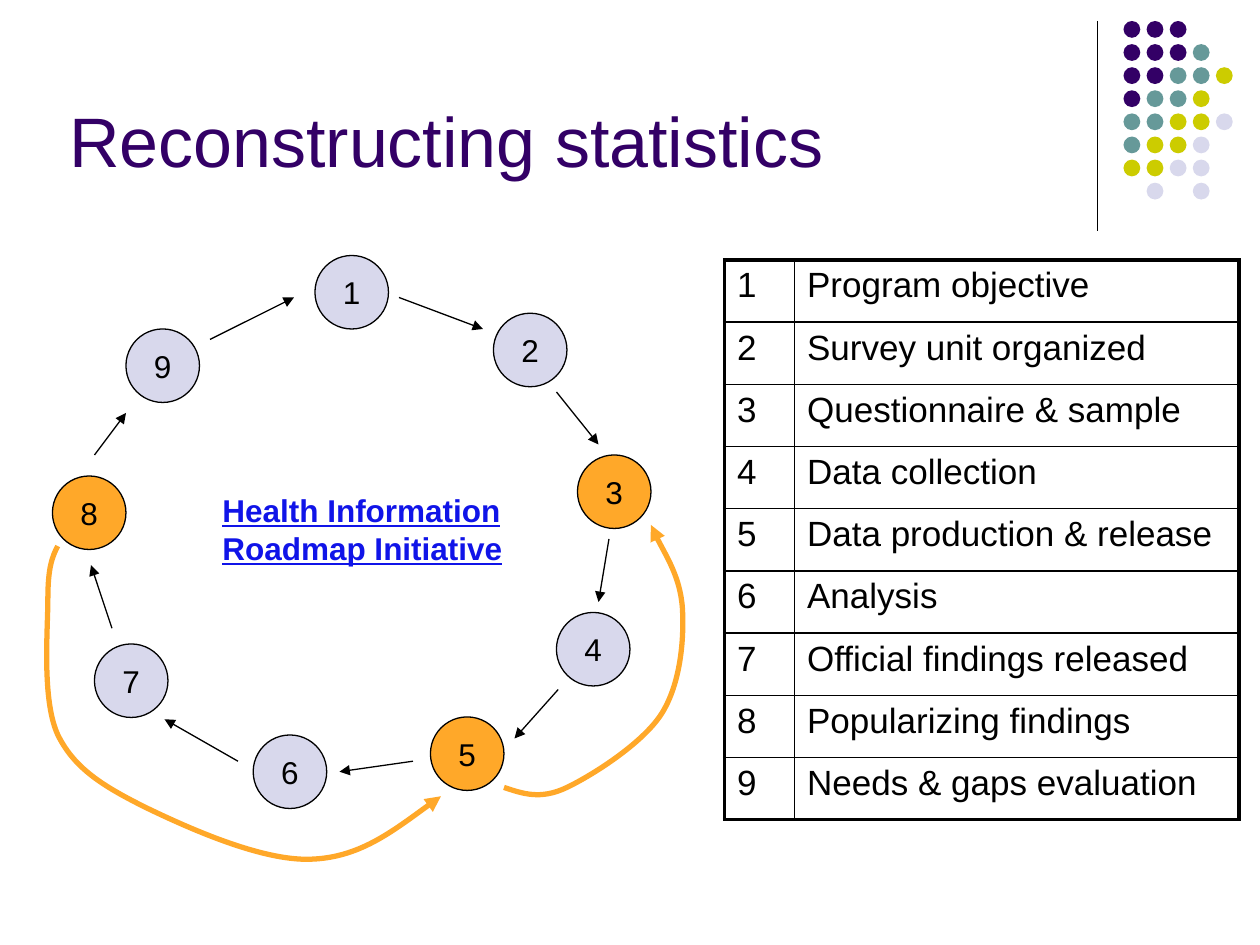
from pptx import Presentation
from pptx.dml.color import RGBColor
from pptx.enum.shapes import MSO_CONNECTOR as CONNECTOR, MSO_SHAPE as SHAPE
from pptx.enum.text import MSO_ANCHOR as ANCHOR, MSO_AUTO_SIZE as AUTO, PP_ALIGN as ALIGN
from pptx.oxml.ns import qn
from pptx.oxml.xmlchemy import OxmlElement as Element
from pptx.util import Pt

PURPLE, TEAL, LIME, LAVENDER = "330066", "669999", "CCCC00", "D8D8EC"
ORANGE, BLACK, LINK_BLUE = "FFA829", "000000", "1014E8"


def rgb(color):
    return RGBColor.from_string(color)


def draw_line(item, color, width, arrow=False):
    item.line.color.rgb = rgb(color)
    item.line.width = Pt(width)
    if arrow:
        head = Element("a:tailEnd")
        head.set("type", "triangle")
        item.line._get_or_add_ln().append(head)
    properties = item._element.spPr
    if properties.find(qn("a:effectLst")) is None:
        properties.append(Element("a:effectLst"))


deck = Presentation()
deck.slide_width, deck.slide_height = Pt(720), Pt(540)
slide = deck.slides.add_slide(deck.slide_layouts[5])
shapes = slide.shapes

# Corner ornament: rule and dot grid
rule = shapes.add_connector(CONNECTOR.STRAIGHT, Pt(627), Pt(12), Pt(627), Pt(132))
draw_line(rule, BLACK, 0.75)
dot_colors = {"P": PURPLE, "T": TEAL, "L": LIME, "V": LAVENDER}
dot_rows = ["PPP", "PPPT", "PPTTL", "PTTL", "TTLLV", "TLLV", "LLVV", " V V"]
for row, letters in enumerate(dot_rows):
    for col, letter in enumerate(letters):
        if letter != " ":
            dot = shapes.add_shape(SHAPE.OVAL, Pt(642 + 13.2 * col), Pt(12 + 13.2 * row),
                                   Pt(9.6), Pt(9.6))
            dot.shadow.inherit = False
            dot.fill.solid()
            dot.fill.fore_color.rgb = rgb(dot_colors[letter])
            dot.line.fill.background()

# Title
title = shapes.title
title.left, title.top, title.width, title.height = Pt(32.4), Pt(17.3), Pt(648), Pt(90)
title.text_frame.text = "Reconstructing statistics"
title.text_frame.auto_size = AUTO.NONE
title.text_frame.vertical_anchor = ANCHOR.BOTTOM
heading = title.text_frame.paragraphs[0]
heading.alignment = ALIGN.LEFT
heading.font.color.rgb = rgb(PURPLE)
for key, value in {"name": "Arial", "size": Pt(40)}.items():
    setattr(heading.font, key, value)

# Numbered steps of the cycle
step_corners = [(180, 146), (282, 179), (330, 260), (318, 350), (246, 409.7),
                (144.7, 420), (54, 368), (30, 272), (72, 188)]
highlighted = {3, 5, 8}
for number, (left, top) in enumerate(step_corners, 1):
    step = shapes.add_shape(SHAPE.OVAL, Pt(left), Pt(top), Pt(42), Pt(42))
    step.shadow.inherit = False
    step.fill.solid()
    step.fill.fore_color.rgb = rgb(ORANGE if number in highlighted else LAVENDER)
    draw_line(step, BLACK, 0.75)
    step.text_frame.text = str(number)
    step.text_frame.word_wrap = False
    step.text_frame.vertical_anchor = ANCHOR.MIDDLE
    label = step.text_frame.paragraphs[0]
    label.alignment = ALIGN.CENTER
    label.font.color.rgb = rgb(BLACK)
    for key, value in {"name": "Arial", "size": Pt(18)}.items():
        setattr(label.font, key, value)

# Arrows between neighbouring steps
step_arrows = [(228, 170, 276, 188), (318, 224, 342, 254), (348, 308, 342, 344),
               (319, 394, 294, 422), (236, 435, 194, 441), (136, 435, 94, 411),
               (64, 359, 52, 323), (54, 260, 72, 236), (120, 194, 168, 170)]
for ends in step_arrows:
    arrow = shapes.add_connector(CONNECTOR.STRAIGHT, *[Pt(value) for value in ends])
    draw_line(arrow, BLACK, 0.75, arrow=True)

# Curved shortcuts 8 to 5 and 5 to 3: a start, then three Bezier points per segment
shortcuts = [
    [(33, 312), (30, 318), (27.4, 324), (27.4, 342), (27.4, 360), (23.8, 399.6), (33, 419.8),
     (42.5, 439.2), (59, 449.3), (83.5, 461.5), (107.3, 473), (149, 491.8), (177, 491),
     (205, 490.3), (228, 472.3), (252, 455)],
    [(288, 450), (298.8, 453.6), (309, 457.2), (324, 450), (339, 442.8), (367.2, 424.8),
     (378, 408), (388.8, 391), (391, 365.8), (390, 347.8), (388.8, 329.8), (375, 308),
     (372, 300)],
]
for points in shortcuts:
    start, *controls = [(Pt(x), Pt(y)) for x, y in points]
    builder = shapes.build_freeform(*start)
    builder.add_line_segments(controls, close=False)
    shortcut = builder.convert_to_shape()
    segments = list(shortcut._element.iter(qn("a:lnTo")))
    for first in range(0, len(segments), 3):
        curve = Element("a:cubicBezTo")
        segments[first].addprevious(curve)
        for segment in segments[first:first + 3]:
            curve.append(segment[0])
            segment.getparent().remove(segment)
    shortcut.shadow.inherit = False
    shortcut.fill.background()
    draw_line(shortcut, ORANGE, 3, arrow=True)

# Table of steps
step_names = ["Program objective", "Survey unit organized", "Questionnaire & sample",
              "Data collection", "Data production & release", "Analysis",
              "Official findings released", "Popularizing findings", "Needs & gaps evaluation"]
last = len(step_names) - 1
legend = shapes.add_table(len(step_names), 2, Pt(414), Pt(148.5), Pt(294), Pt(320)).table
legend.first_row = legend.horz_banding = False
legend.columns[0].width, legend.columns[1].width = Pt(40), Pt(254)
for row, name in enumerate(step_names):
    legend.rows[row].height = Pt(35.55)
    for col, text in enumerate([str(row + 1), name]):
        cell = legend.cell(row, col)
        cell.text = text
        entry = cell.text_frame.paragraphs[0]
        entry.font.color.rgb = rgb(BLACK)
        for key, value in {"name": "Arial", "size": Pt(20)}.items():
            setattr(entry.font, key, value)
        outer_sides = {"a:lnL": col == 0, "a:lnR": col == 1,
                       "a:lnT": row == 0, "a:lnB": row == last}
        for side, outer in outer_sides.items():
            border = Element(side)
            border.set("w", str(Pt(2.25 if outer else 1)))
            paint, ink = Element("a:solidFill"), Element("a:srgbClr")
            ink.set("val", BLACK)
            paint.append(ink)
            border.append(paint)
            cell._tc.get_or_add_tcPr().append(border)
        cell.fill.background()

# Initiative name in the middle of the cycle
initiative = shapes.add_textbox(Pt(120), Pt(277), Pt(198), Pt(51)).text_frame
initiative.word_wrap = True
initiative.auto_size = AUTO.SHAPE_TO_FIT_TEXT
initiative.text = "Health Information\nRoadmap Initiative"
for line in initiative.paragraphs:
    line.font.color.rgb = rgb(LINK_BLUE)
    for key, value in {"name": "Arial", "size": Pt(18), "bold": True, "underline": True}.items():
        setattr(line.font, key, value)

deck.save("out.pptx")
